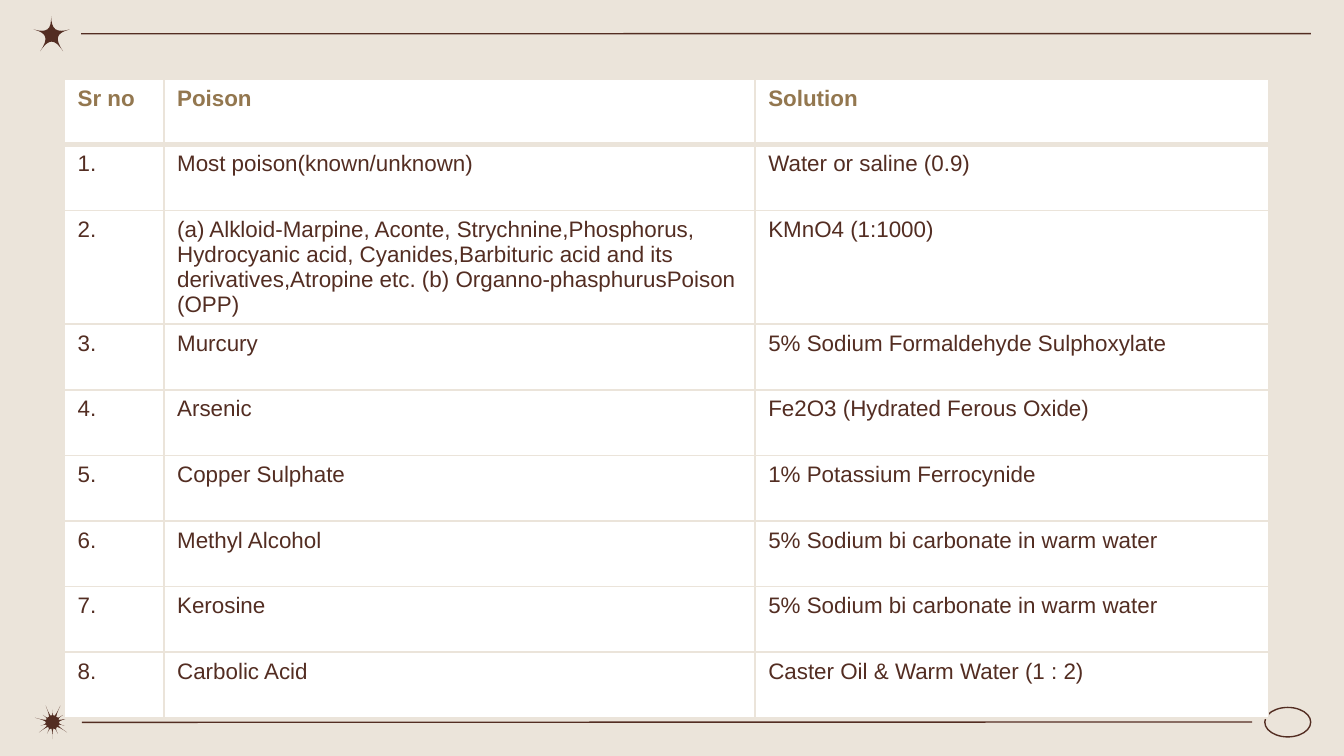
"""Build a slide with a table of poisons and their wash solutions."""
from typing import NamedTuple

from lxml import etree
from pptx import Presentation
from pptx.dml.color import RGBColor
from pptx.enum.shapes import MSO_CONNECTOR, MSO_SHAPE
from pptx.oxml.ns import qn
from pptx.util import Pt

STRAIGHT = MSO_CONNECTOR.STRAIGHT
OVAL = MSO_SHAPE.OVAL

SAND = RGBColor(0xEB, 0xE4, 0xDA)
BROWN = RGBColor(0x53, 0x2D, 0x22)
GOLD = RGBColor(0x93, 0x77, 0x4F)
WHITE = RGBColor(0xFF, 0xFF, 0xFF)

BLANK_LAYOUT = 6
FONT_NAME = "Arial"
FONT_SIZE = 12
LINE_WIDTH = 0.75
CURVE_PULL = 0.75
BORDER_WIDTH = 1
HEADER_BORDER_WIDTH = 3
COLUMN_WIDTHS = (53.3, 316.7, 275.1)
ROW_HEIGHT = 35.15


class Point(NamedTuple):
    x: float
    y: float


class Star(NamedTuple):
    center: Point
    tips: tuple[Point, ...]


class Rule(NamedTuple):
    start: Point
    end: Point


class Remedy(NamedTuple):
    poison: str
    solution: str


RULES = (
    Rule(Point(702.2, 18), Point(43.4, 18.1)),
    Rule(Point(670.8, 386.8), Point(43.9, 387)),
)

STARS = (
    Star(Point(28.1, 387), (
        Point(36, 392.4), Point(34.6, 388.8), Point(37.4, 384.5),
        Point(33.8, 383), Point(32.4, 378), Point(28.1, 380.2),
        Point(24.5, 378), Point(23, 383), Point(18.7, 384.5),
        Point(21.6, 388.8), Point(20.9, 392.4), Point(25.2, 393.1),
        Point(28.1, 396), Point(31, 393.1),
    )),
    Star(Point(27.7, 18.4), (
        Point(27.4, 8.6), Point(18, 15.8), Point(21.6, 27.4),
        Point(33.8, 27.4), Point(37.4, 15.8),
    )),
)

HEADINGS = ("Sr no", "Poison", "Solution")
REMEDIES = (
    Remedy("Most poison(known/unknown)", "Water or saline (0.9)"),
    Remedy(
        "(a) Alkloid-Marpine, Aconte, Strychnine,Phosphorus, Hydrocyanic acid, "
        "Cyanides,Barbituric acid and its derivatives,Atropine etc. "
        "(b) Organno-phasphurusPoison (OPP)",
        "KMnO4 (1:1000)",
    ),
    Remedy("Murcury", "5% Sodium Formaldehyde Sulphoxylate"),
    Remedy("Arsenic", "Fe2O3 (Hydrated Ferous Oxide)"),
    Remedy("Copper Sulphate", "1% Potassium Ferrocynide"),
    Remedy("Methyl Alcohol", "5% Sodium bi carbonate in warm water"),
    Remedy("Kerosine", "5% Sodium bi carbonate in warm water"),
    Remedy("Carbolic Acid", "Caster Oil & Warm Water (1 : 2)"),
)


def toward(tip: Point, center: Point) -> Point:
    return Point(*(a + CURVE_PULL * (b - a) for a, b in zip(tip, center)))


def bend_edge(edge, controls: tuple[Point, ...], left: int, top: int) -> None:
    edge.tag = qn("a:cubicBezTo")
    for index, control in enumerate(controls):
        edge.insert(index, etree.Element(
            qn("a:pt"), x=str(Pt(control.x) - left), y=str(Pt(control.y) - top)))


def draw_star(page, star: Star) -> None:
    first, *others = star.tips
    ends = (*others, first)
    outline = page.shapes.build_freeform(Pt(first.x), Pt(first.y))
    outline.add_line_segments([(Pt(tip.x), Pt(tip.y)) for tip in ends], close=True)
    shape = outline.convert_to_shape()
    edges = list(shape._element.iter(qn("a:lnTo")))
    for edge, start, end in zip(edges, star.tips, ends):
        controls = (toward(start, star.center), toward(end, star.center))
        bend_edge(edge, controls, shape.left, shape.top)
    shape.shadow.inherit = False
    shape.fill.solid()
    shape.fill.fore_color.rgb = BROWN
    shape.line.fill.background()


def draw_rule(page, rule: Rule) -> None:
    line = page.shapes.add_connector(
        STRAIGHT, *(Pt(value) for value in (*rule.start, *rule.end)))
    line.line.color.rgb = BROWN
    line.line.width = Pt(LINE_WIDTH)
    etree.SubElement(line._element.spPr, qn("a:effectLst"))


def draw_oval(page) -> None:
    oval = page.shapes.add_shape(OVAL, Pt(677.6), Pt(379), Pt(24.6), Pt(15.8))
    oval.shadow.inherit = False
    oval.fill.background()
    oval.line.color.rgb = BROWN
    oval.line.width = Pt(LINE_WIDTH)


def set_border(cell, side: str, width: float) -> None:
    properties = cell._tc.get_or_add_tcPr()
    border = etree.SubElement(properties, qn(f"a:ln{side}"), w=str(Pt(width)))
    fill = etree.SubElement(border, qn("a:solidFill"))
    etree.SubElement(fill, qn("a:srgbClr"), val=str(SAND))


def fill_cell(cell, text: str, row: int) -> None:
    header = row == 0
    thick = {"B"} if header else {"T"} if row == 1 else set()
    for side in "LRTB":
        set_border(cell, side, HEADER_BORDER_WIDTH if side in thick else BORDER_WIDTH)
    cell.fill.solid()
    cell.fill.fore_color.rgb = WHITE
    span = cell.text_frame.paragraphs[0].add_run()
    span.text = text
    span.font.name = FONT_NAME
    span.font.size = Pt(FONT_SIZE)
    span.font.bold = header
    span.font.color.rgb = GOLD if header else BROWN


def draw_table(page) -> None:
    rows = [HEADINGS]
    rows += [(f"{number}.", *remedy) for number, remedy in enumerate(REMEDIES, 1)]
    box = page.shapes.add_table(
        len(rows), len(HEADINGS), Pt(34.4), Pt(42.4),
        Pt(sum(COLUMN_WIDTHS)), Pt(ROW_HEIGHT * len(rows)))
    table = box.table
    table.first_row = table.horz_banding = False
    for column, width in zip(table.columns, COLUMN_WIDTHS):
        column.width = Pt(width)
    for row, texts in enumerate(rows):
        table.rows[row].height = Pt(ROW_HEIGHT)
        for column, text in enumerate(texts):
            fill_cell(table.cell(row, column), text, row)


def main() -> None:
    deck = Presentation()
    deck.slide_width, deck.slide_height = Pt(720), Pt(405)
    page = deck.slides.add_slide(deck.slide_layouts[BLANK_LAYOUT])
    page.background.fill.solid()
    page.background.fill.fore_color.rgb = SAND
    draw_oval(page)
    for rule in RULES:
        draw_rule(page, rule)
    for star in STARS:
        draw_star(page, star)
    draw_table(page)
    deck.save("out.pptx")


if __name__ == "__main__":
    main()
